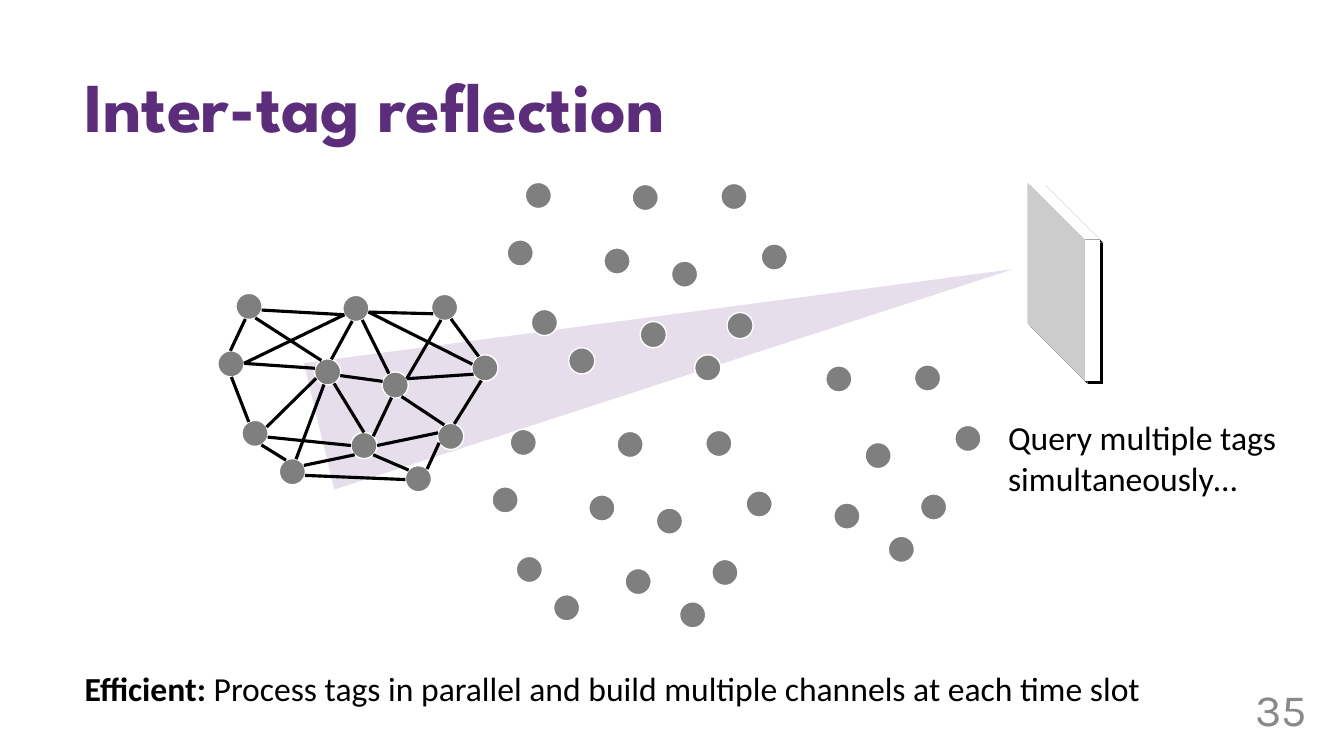
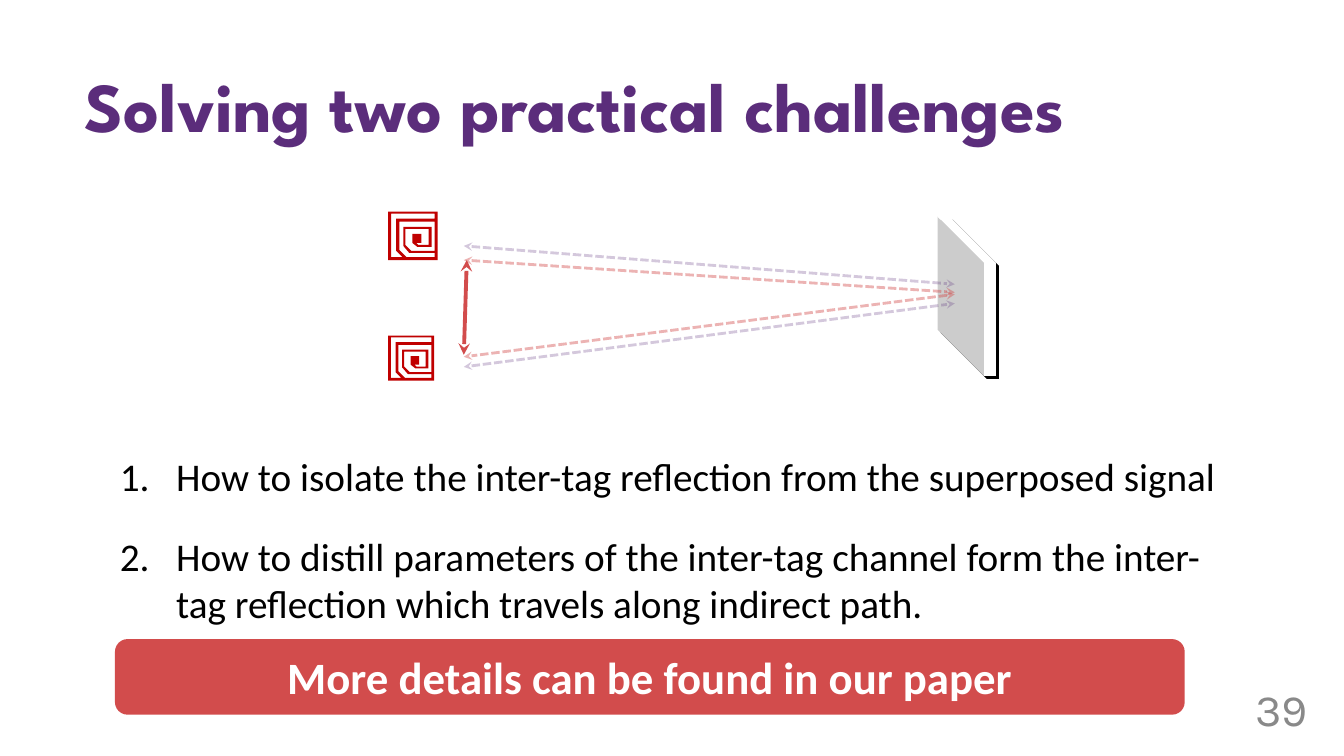
import math

import lxml.etree
import pptx
import pptx.dml.color
import pptx.enum.dml
import pptx.enum.shapes
import pptx.enum.text
import pptx.oxml.ns
import pptx.util

RGBColor = pptx.dml.color.RGBColor
MSO_SHAPE = pptx.enum.shapes.MSO_SHAPE
Pt = pptx.util.Pt
qn = pptx.oxml.ns.qn
SubElement = lxml.etree.SubElement

PURPLE = RGBColor(0x5B, 0x2D, 0x7B)
RED = RGBColor(0xD2, 0x4C, 0x4C)
TAG_RED = RGBColor(0xC0, 0x00, 0x00)
GREY = RGBColor(0x7F, 0x7F, 0x7F)
PAGE_GREY = RGBColor(0x89, 0x89, 0x89)
BLACK = RGBColor(0x00, 0x00, 0x00)
WHITE = RGBColor(0xFF, 0xFF, 0xFF)

prs = pptx.Presentation()
prs.slide_width = pptx.util.Inches(13.33)
prs.slide_height = pptx.util.Inches(7.5)
CELL = prs.slide_height / 7.5


def grid(*cells):
    return [round(CELL * cell) for cell in cells]


def write(shape, font, size, color, *runs):
    tf = shape.text_frame
    tf.word_wrap = True
    p = tf.paragraphs[0]
    for text, bold in runs:
        r = p.add_run()
        r.text = text
        r.font.name = font
        r.font.size = Pt(size)
        r.font.bold = bold
        r.font.color.rgb = color
    return p


slides = []
for title, page in [
    ("Inter-tag reflection", "35"),
    ("Solving two practical challenges", "39"),
]:
    s = prs.slides.add_slide(prs.slide_layouts[6])
    slides.append(s)
    sp = s.shapes.add_textbox(*grid(0.74, 0.57, 11.21, 0.94))
    write(sp, "League Spartan", 50, PURPLE, (title, True))
    sp = s.shapes.add_textbox(*grid(12.41, 7, 0.73, 0.32))
    tf = sp.text_frame
    tf.margin_left = tf.margin_right = tf.margin_top = tf.margin_bottom = 0
    p = write(sp, "Karla", 32, PAGE_GREY, (page, False))
    p.line_spacing = Pt(21.2)
    p._p.get_or_add_pPr().set("marL", str(grid(0.04)[0]))
reflection, challenges = slides

beam = reflection.shapes.add_shape(
    MSO_SHAPE.ISOSCELES_TRIANGLE, *grid(5.95, -0.13, 1.29, 7.06)
)
beam.adjustments[0] = 0.58
beam.rotation = 76.4
beam.shadow.inherit = False
beam.line.fill.background()
beam.fill.solid()
beam.fill.fore_color.rgb = PURPLE
color = beam._element.spPr.find(qn("a:solidFill"))[0]
SubElement(color, qn("a:alpha"), val="15000")

for s, box in [
    (reflection, (10.19, 1.81, 0.72, 1.97)),
    (challenges, (9.3, 2.15, 0.58, 1.58)),
]:
    reader = s.shapes.add_shape(MSO_SHAPE.CUBE, *grid(*box))
    reader.adjustments[0] = 0.79
    reader.fill.solid()
    reader.fill.fore_color.rgb = WHITE
    reader.line.fill.background()
    reader.shadow.inherit = False
    spPr = reader._element.spPr
    spPr.find(qn("a:xfrm")).set("flipH", "1")
    shadow = SubElement(
        spPr.find(qn("a:effectLst")), qn("a:outerShdw"),
        dist=str(Pt(3)), dir="2700000", algn="tl", rotWithShape="0",
    )
    SubElement(shadow, qn("a:srgbClr"), val=str(BLACK))

DOT = 0.26
TILT = 16.2
cluster = [
    (4.68, 3.52, TILT), (2.16, 3.48, 42.8), (2.40, 4.17, TILT), (3.12, 3.56, TILT),
    (3.48, 4.29, 0), (4.34, 4.20, TILT), (3.79, 3.69, TILT), (2.34, 2.91, TILT),
    (3.40, 2.93, TILT), (4.28, 2.92, TILT), (2.77, 4.55, TILT), (4.02, 4.62, 356.7),
]
everyone = range(len(cluster))
for dx, dy, members in [
    (0, 0, everyone),
    (2.72, 1.35, everyone),
    (2.87, -1.1, everyone),
    (4.79, 0.7, (0, 4, 5, 6, 8, 9, 11)),
]:
    for i in members:
        x, y, tilt = cluster[i]
        dot = reflection.shapes.add_shape(
            MSO_SHAPE.OVAL, *grid(x + dx, y + dy, DOT, DOT)
        )
        dot.rotation = tilt
        dot.shadow.inherit = False
        dot.fill.solid()
        dot.fill.fore_color.rgb = GREY
        dot.line.color.rgb = WHITE
        dot.line.width = Pt(1)

links = [
    (3, 1, 4, 6), (2, 7, 3, 3), (2, 5, 1, 1), (10, 6, 3, 2), (2, 0, 4, 4),
    (10, 7, 4, 3), (2, 1, 10, 5), (8, 2, 3, 6), (8, 3, 7, 0), (3, 4, 1, 7),
    (7, 1, 3, 5), (1, 7, 8, 3), (1, 5, 7, 2), (9, 1, 0, 5), (6, 7, 0, 3),
    (0, 4, 8, 0), (6, 7, 9, 2), (8, 0, 9, 3), (8, 1, 6, 5), (3, 0, 6, 4),
    (5, 6, 0, 2), (6, 2, 4, 7), (5, 5, 6, 1), (5, 4, 4, 0), (11, 5, 4, 1),
    (11, 7, 5, 3), (10, 0, 11, 4),
]
lines = []
for a, site_a, b, site_b in links:
    ends = []
    for i, site in [(a, site_a), (b, site_b)]:
        x, y, tilt = cluster[i]
        angle = math.radians(45 * site + tilt)
        ends += [
            x + DOT / 2 * (1 + math.cos(angle)),
            y + DOT / 2 * (1 + math.sin(angle)),
        ]
    lines.append((reflection, ends, BLACK, 2.25, 100))
lines += [
    (challenges, (4.6, 2.44, 9.47, 2.82), PURPLE, 2, 26),
    (challenges, (4.6, 3.64, 9.47, 3.01), PURPLE, 2, 26),
    (challenges, (4.6, 2.58, 9.47, 2.9), RED, 2, 41),
    (challenges, (4.6, 3.52, 4.63, 2.58), RED, 2.75, 100),
    (challenges, (9.47, 2.92, 4.6, 3.54), RED, 2, 41),
]
for s, ends, color, width, opacity in lines:
    line = s.shapes.add_connector(pptx.enum.shapes.MSO_CONNECTOR.STRAIGHT, *grid(*ends))
    line.line.color.rgb = color
    line.line.width = Pt(width)
    spPr = line._element.spPr
    ln = spPr.find(qn("a:ln"))
    if opacity < 100:
        line.line.dash_style = pptx.enum.dml.MSO_LINE.SQUARE_DOT
        fill = ln.find(qn("a:solidFill"))[0]
        SubElement(fill, qn("a:alpha"), val=str(opacity * 1000))
    if s is challenges:
        for end in ("a:headEnd", "a:tailEnd"):
            SubElement(ln, qn(end), type="stealth")
    SubElement(spPr, qn("a:effectLst"))

for box, runs in [
    ((9.9, 4.09, 2.98, 0.91), [("Query multiple tags simultaneously…", False)]),
    ((0.74, 6.58, 12.33, 0.5), [
        ("Efficient: ", True),
        ("Process tags in parallel and build multiple channels at each time slot", False),
    ]),
]:
    write(reflection.shapes.add_textbox(*grid(*box)), "Calibri", 24, BLACK, *runs)

antenna = [
    [(0, 0), (0, 48), (49, 48), (49, 0)],
    [
        (46, 45), (18, 45), (11, 38), (11, 10), (46, 10), (46, 39), (23, 39), (17, 33),
        (17, 17), (40, 17), (40, 33), (30, 33), (28, 31), (33, 31), (33, 22), (24, 22),
        (24, 31), (29, 35), (43, 35), (43, 15), (15, 15), (15, 34), (21, 41), (46, 41),
    ],
    [(46, 7), (8, 7), (8, 39), (14, 45), (3, 45), (3, 2), (46, 2)],
]
for top, scale in [(3.33, 0.93), (2.1, 1)]:
    outline = challenges.shapes.build_freeform(*antenna[0][0], scale=CELL * scale / 100)
    for contour in antenna:
        outline.move_to(*contour[0])
        outline.add_line_segments(contour[1:], close=True)
    tag = outline.convert_to_shape(*grid(3.85, top))
    tag.shadow.inherit = False
    tag.fill.solid()
    tag.fill.fore_color.rgb = TAG_RED
    tag.line.fill.background()

for number, top, height, question in [
    (1, 4.44, 0.57, "How to isolate the inter-tag reflection from the superposed signal"),
    (2, 5.23, 1.04, "How to distill parameters of the inter-tag channel form the "
                    "inter-tag reflection which travels along indirect path."),
]:
    sp = challenges.shapes.add_textbox(*grid(1.09, top, 11.16, height))
    p = write(sp, "Calibri", 28, BLACK, (question, False))
    pPr = p._p.get_or_add_pPr()
    indent = grid(0.56)[0]
    pPr.set("marL", str(indent))
    pPr.set("indent", str(-indent))
    SubElement(pPr, qn("a:buFont"), typeface="+mj-lt")
    SubElement(pPr, qn("a:buAutoNum"), type="arabicPeriod", startAt=str(number))

banner = challenges.shapes.add_shape(
    MSO_SHAPE.ROUNDED_RECTANGLE, *grid(1.14, 6.34, 10.61, 0.75)
)
banner.shadow.inherit = False
banner.fill.solid()
banner.fill.fore_color.rgb = RED
banner.line.fill.background()
banner.text_frame.vertical_anchor = pptx.enum.text.MSO_ANCHOR.MIDDLE
p = write(banner, "Calibri", 32, WHITE, ("More details can be found in our paper", True))
p.alignment = pptx.enum.text.PP_ALIGN.CENTER

prs.save("out.pptx")
